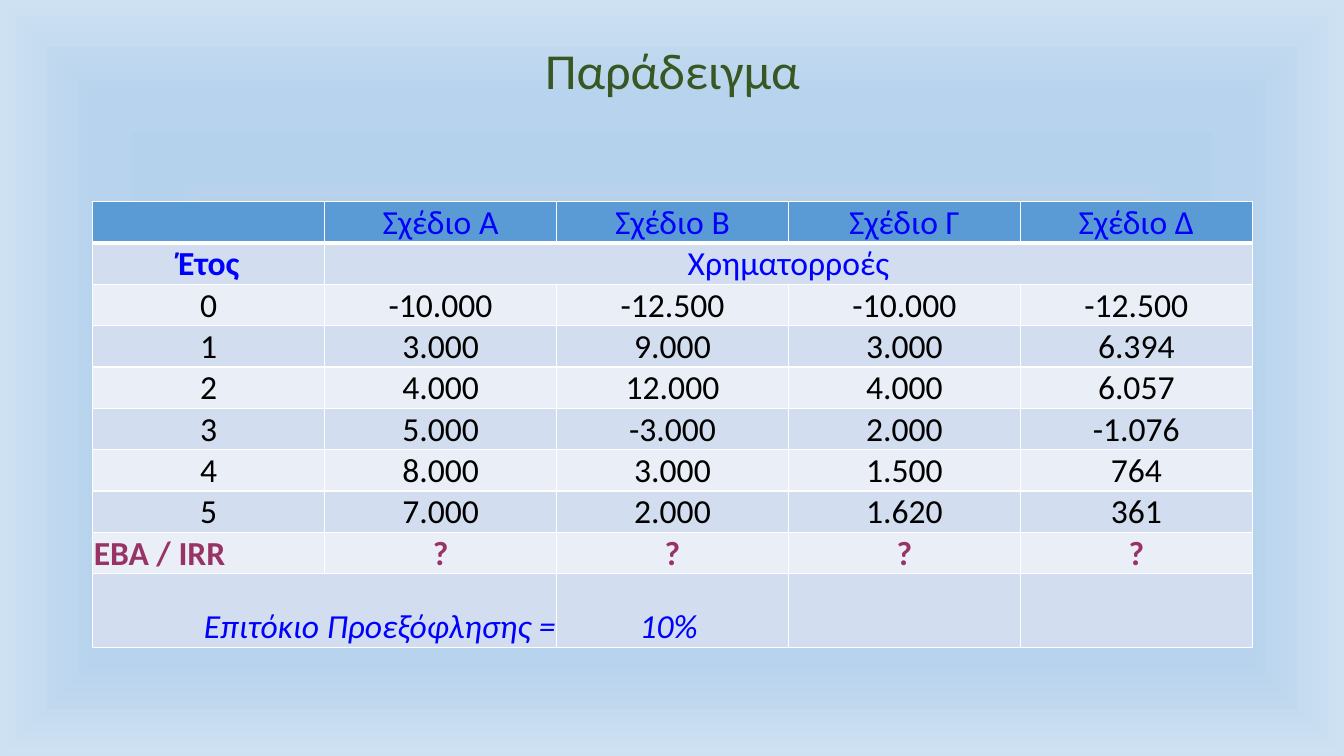
from lxml import etree
from pptx import Presentation
from pptx import util as u
from pptx.dml.color import RGBColor
from pptx.enum import text
from pptx.oxml.ns import qn

TITLE = "Παράδειγμα"
ROWS = [
    ["", "Σχέδιο A", "Σχέδιο Β", "Σχέδιο Γ", "Σχέδιο Δ"],
    ["Έτος", "Χρηματορροές", "", "", ""],
    ["0", "-10.000", "-12.500", "-10.000", "-12.500"],
    ["1", "3.000", "9.000", "3.000", "6.394"],
    ["2", "4.000", "12.000", "4.000", "6.057"],
    ["3", "5.000", "-3.000", "2.000", "-1.076"],
    ["4", "8.000", "3.000", "1.500", "764"],
    ["5", "7.000", "2.000", "1.620", "361"],
    ["ΕΒΑ / IRR", "?", "?", "?", "?"],
    ["Επιτόκιο Προεξόφλησης =", "", "10% ", "", ""],
]
MERGES = [((1, 1), (1, 4)), ((9, 0), (9, 1))]
COLORS = {"title": "385723", "head": "5B9BD5", "dark": "D2DEEF",
          "light": "EAEFF7", "blue": "0000FF", "black": "000000",
          "plum": "993366", "edge": "FFFFFF"}
STOPS = [(0, "C9C9C9"), (36, "BBCFE1"), (45, "B8D1E7"), (54, "B5D2EC"),
         (65, "B5D2EC"), (75, "B7D3ED"), (100, "CEE1F2")]
FONT = "Calibri"
WIDE, HIGH = 13.33, 7.5
LEFT, TOP, COL, ROW = 0.92, 2, 2.3, 0.37
LAST = len(ROWS) - 1
ALIGN = text.PP_ALIGN


def add(parent, tag, **attrs):
    return etree.SubElement(parent, qn(tag), attrs)


def paint(slide):
    """Give the slide a gradient that runs from its edges to its centre."""
    slide.background.fill.gradient()
    grad = next(slide.element.iter(qn("a:gradFill")))
    for child in list(grad):
        grad.remove(child)
    stops = add(grad, "a:gsLst")
    for share, color in STOPS:
        stop = add(stops, "a:gs", pos=str(share * 1000))
        add(stop, "a:srgbClr", val=color)
    shape = add(grad, "a:path", path="shape")
    add(shape, "a:fillToRect", **dict.fromkeys("ltrb", "50000"))


def write(para, words, size, color, align, bold=False, slant=False):
    para.alignment = align
    run = para.add_run()
    run.text = words
    font = run.font
    font.name, font.size = FONT, u.Pt(size)
    font.bold, font.italic = bold, slant
    font.color.rgb = RGBColor.from_string(COLORS[color])


def edge(cell, row):
    """Draw the four borders; the line under the head row is thicker."""
    props = cell._tc.get_or_add_tcPr()
    thick = {"B": 0, "T": 1}
    for spot, side in enumerate("LRTB"):
        width = 3 if thick.get(side) == row else 1
        line = etree.Element(qn("a:ln" + side), w=str(u.Pt(width)))
        add(add(line, "a:solidFill"), "a:srgbClr", val=COLORS["edge"])
        props.insert(spot, line)


def style(row, col):
    """Return text colour, alignment, bold and italic of a cell."""
    if row == LAST:
        return "blue", ALIGN.CENTER if col else ALIGN.RIGHT, False, True
    if row == LAST - 1:
        return "plum", ALIGN.CENTER if col else ALIGN.LEFT, True, False
    color = "blue" if row < 2 else "black"
    return color, ALIGN.CENTER, (row, col) == (1, 0), False


def build_table(slide):
    count = len(ROWS[0])
    heights = [ROW] * LAST + [0.73]
    table = slide.shapes.add_table(
        len(ROWS), count, u.Inches(LEFT), u.Inches(TOP),
        u.Inches(COL * count), u.Inches(sum(heights))).table
    for col in table.columns:
        col.width = u.Inches(COL)
    for row, words in enumerate(ROWS):
        table.rows[row].height = u.Inches(heights[row])
        shade = "head" if row == 0 else "dark" if row % 2 else "light"
        for col, word in enumerate(words):
            cell = table.cell(row, col)
            cell.fill.solid()
            cell.fill.fore_color.rgb = RGBColor.from_string(COLORS[shade])
            edge(cell, row)
            cell.vertical_anchor = text.MSO_ANCHOR.BOTTOM
            cell.margin_left = cell.margin_right = cell.margin_top = u.Inches(0.01)
            cell.margin_bottom = 0
            if word:
                write(cell.text_frame.paragraphs[0], word, 24, *style(row, col))
    for start, end in MERGES:
        table.cell(*start).merge(table.cell(*end))


def main():
    deck = Presentation()
    deck.slide_width, deck.slide_height = u.Inches(WIDE), u.Inches(HIGH)
    slide = deck.slides.add_slide(deck.slide_layouts[6])
    paint(slide)
    frame = slide.shapes.add_textbox(
        u.Inches(LEFT), 0, u.Inches(COL * 5), u.Inches(1.45)).text_frame
    frame.word_wrap = True
    frame.vertical_anchor = text.MSO_ANCHOR.MIDDLE
    frame.paragraphs[0].line_spacing = 0.9
    write(frame.paragraphs[0], TITLE, 36, "title", ALIGN.CENTER)
    build_table(slide)
    deck.save("out.pptx")


if __name__ == "__main__":
    main()
